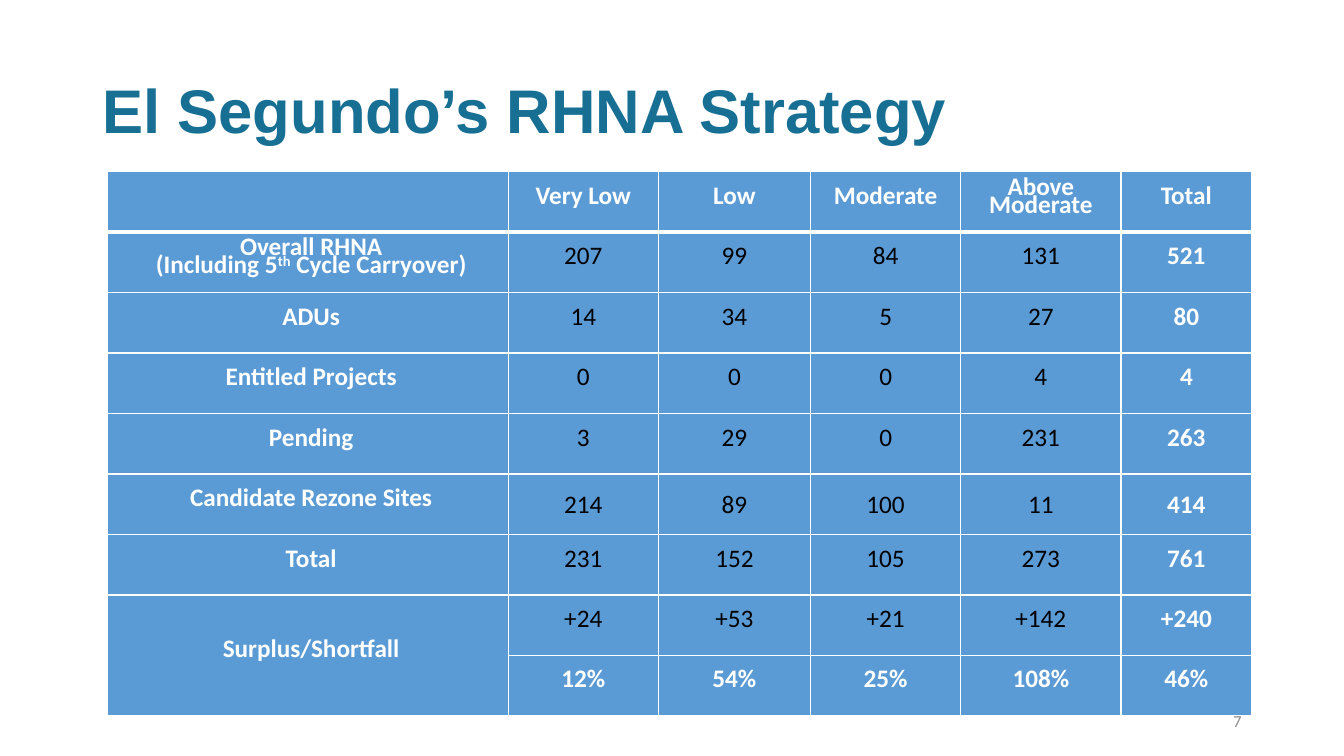
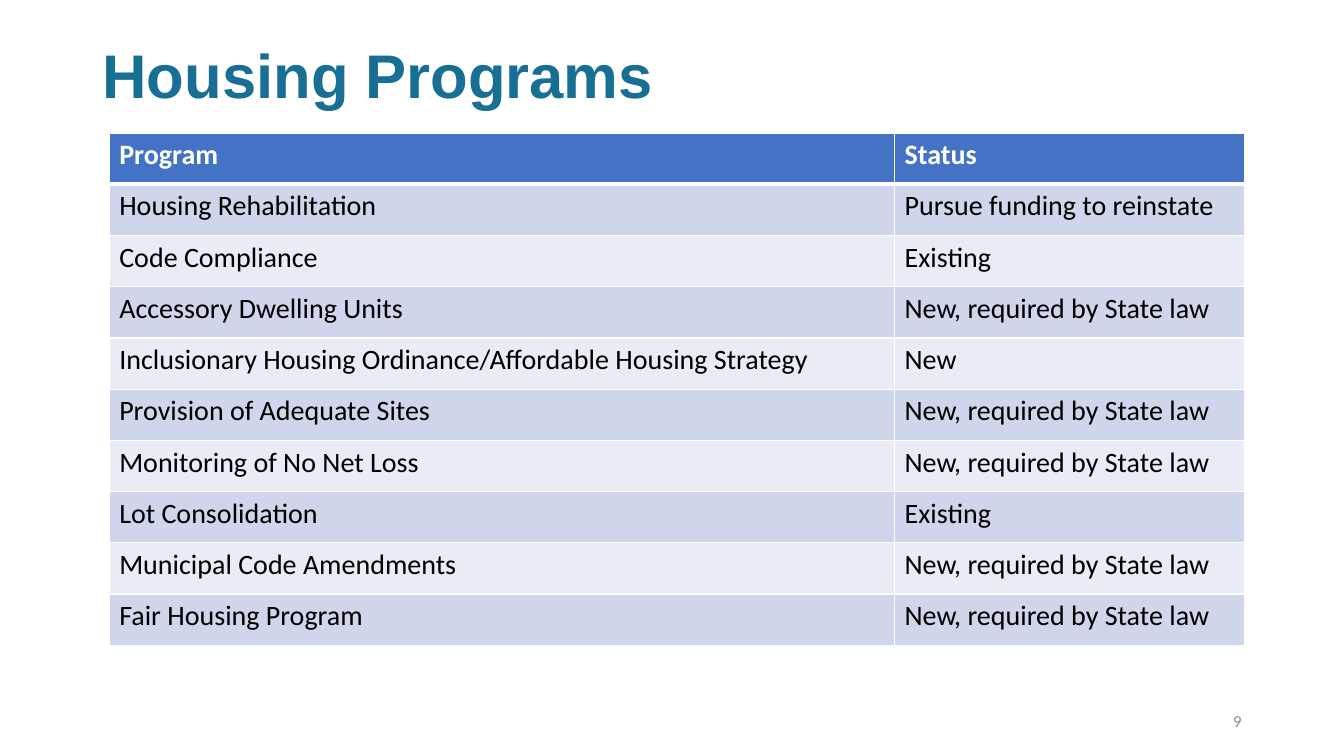
from dataclasses import dataclass

from pptx import Presentation
from pptx import util as u
from pptx.dml.color import RGBColor
from pptx.enum import text as t
from pptx.oxml import parse_xml
from pptx.oxml.ns import nsdecls

Pt = u.Pt


@dataclass(frozen=True)
class Theme:
    title_font: str = "Arial"
    body_font: str = "Calibri"
    title: str = "186F94"
    number: str = "8C8C8C"
    light: str = "FFFFFF"
    dark: str = "000000"
    strategy_fill: str = "5B9BD5"
    header_fill: str = "4472C4"
    bands: tuple = ("CFD5EA", "E9EBF5")
    title_size: int = 44
    program_size: int = 20
    strategy_size: int = 18
    number_size: int = 12
    strategy_leading: int = 13


THEME = Theme()

STRATEGY_ROWS = [
    ("", "Very Low", "Low", "Moderate", "Above Moderate", "Total"),
    ("Overall RHNA\n(Including 5^th^ Cycle Carryover)", "207", "99", "84", "131", "521"),
    ("ADUs", "14", "34", "5", "27", "80"),
    ("Entitled Projects", "0", "0", "0", "4", "4"),
    ("Pending", "3", "29", "0", "231", "263"),
    ("Candidate Rezone Sites", "214", "89", "100", "11", "414"),
    ("Total", "231", "152", "105", "273", "761"),
    ("Surplus/Shortfall", "+24", "+53", "+21", "+142", "+240"),
    ("", "12%", "54%", "25%", "108%", "46%"),
]
REZONE_ROW, TOTAL_ROW, SURPLUS_ROW, PERCENT_ROW = 5, 6, 7, 8

REQUIRED = "New, required by State law"
PROGRAM_ROWS = [
    ("Program", "Status"),
    ("Housing Rehabilitation", "Pursue funding to reinstate"),
    ("Code Compliance", "Existing"),
    ("Accessory Dwelling Units", REQUIRED),
    ("Inclusionary Housing Ordinance/Affordable Housing Strategy", "New"),
    ("Provision of Adequate Sites", REQUIRED),
    ("Monitoring of No Net Loss", REQUIRED),
    ("Lot Consolidation", "Existing"),
    ("Municipal Code Amendments", REQUIRED),
    ("Fair Housing Program", REQUIRED),
]


def add_run(paragraph, words, font, size, color, bold=False):
    run = paragraph.add_run()
    run.text = words
    run.font.name = font
    run.font.size = Pt(size)
    run.font.bold = bold
    run.font.color.rgb = RGBColor.from_string(color)
    return run


def add_slide(presentation, title, number, anchor):
    slide = presentation.slides.add_slide(presentation.slide_layouts[5])
    shape = slide.shapes.title
    shape.left, shape.top, shape.width, shape.height = Pt(66), Pt(28.75), Pt(828), Pt(104.4)
    frame = shape.text_frame
    frame.auto_size = t.MSO_AUTO_SIZE.NONE
    frame.vertical_anchor = anchor
    paragraph = frame.paragraphs[0]
    paragraph.alignment = t.PP_ALIGN.LEFT
    paragraph.line_spacing = 0.9
    add_run(paragraph, title, THEME.title_font, THEME.title_size, THEME.title, True)
    add_slide_number(slide, number)
    return slide


def add_slide_number(slide, number):
    frame = slide.shapes.add_textbox(Pt(678), Pt(500.5), Pt(216), Pt(28.75)).text_frame
    frame.word_wrap = True
    frame.vertical_anchor = t.MSO_ANCHOR.MIDDLE
    paragraph = frame.paragraphs[0]
    paragraph.alignment = t.PP_ALIGN.RIGHT
    add_run(paragraph, number, THEME.body_font, THEME.number_size, THEME.number)


def add_table(slide, rows, left, top, widths, row_height):
    frame = slide.shapes.add_table(
        len(rows), len(widths), Pt(left), Pt(top), Pt(sum(widths)), Pt(row_height * len(rows)))
    table = frame.table
    table.first_row = table.horz_banding = False
    for column, width in zip(table.columns, widths):
        column.width = Pt(width)
    for row in table.rows:
        row.height = Pt(row_height)
    return table


def style_cell(cell, fill, above=1, below=1):
    cell.fill.solid()
    cell.fill.fore_color.rgb = RGBColor.from_string(fill)
    properties = cell._tc.get_or_add_tcPr()
    sides = (("lnL", 1), ("lnR", 1), ("lnT", above), ("lnB", below))
    for position, (side, width) in enumerate(sides):
        properties.insert(position, parse_xml(
            f'<a:{side} {nsdecls("a")} w="{Pt(width)}"><a:solidFill>'
            f'<a:srgbClr val="{THEME.light}"/></a:solidFill></a:{side}>'))


def write_cell(cell, words, size, color, bold, alignment=None, leading=None):
    frame = cell.text_frame
    for index, line in enumerate(words.split("\n")):
        paragraph = frame.add_paragraph() if index else frame.paragraphs[0]
        paragraph.alignment = alignment
        paragraph.line_spacing = leading
        for part, piece in enumerate(line.split("^")):
            if piece:
                run = add_run(paragraph, piece, THEME.body_font, size, color, bold)
                if part % 2:
                    run._r.get_or_add_rPr().set("baseline", "30000")


def add_strategy_table(slide):
    widths = (286.5, 107.25, 108.75, 107.25, 114.5, 93.5)
    table = add_table(slide, STRATEGY_ROWS, 76.5, 122.5, widths, 43.2)
    table.cell(SURPLUS_ROW, 0).merge(table.cell(PERCENT_ROW, 0))
    rules = {0: 3, TOTAL_ROW: 2.25, SURPLUS_ROW: 0.75}
    for r, row in enumerate(STRATEGY_ROWS):
        for c, words in enumerate(row):
            cell = table.cell(r, c)
            if cell.is_spanned:
                continue
            cell.margin_left = Pt(5 if r and not c else 0)
            cell.margin_right = cell.margin_top = cell.margin_bottom = Pt(0)
            cell.vertical_anchor = t.MSO_ANCHOR.MIDDLE
            style_cell(cell, THEME.strategy_fill, rules.get(r - 1, 1), rules.get(r, 1))
            strong = r in (0, PERCENT_ROW) or c in (0, len(row) - 1)
            leading = 1.07 if r == REZONE_ROW and c else Pt(THEME.strategy_leading)
            write_cell(cell, words, THEME.strategy_size, THEME.light if strong else THEME.dark,
                       strong, t.PP_ALIGN.CENTER, leading)


def add_program_table(slide):
    table = add_table(slide, PROGRAM_ROWS, 78, 95, (561, 250), 36.6)
    for r, row in enumerate(PROGRAM_ROWS):
        header = r == 0
        fill = THEME.header_fill if header else THEME.bands[(r - 1) % 2]
        for c, words in enumerate(row):
            cell = table.cell(r, c)
            style_cell(cell, fill, 3 if r == 1 else 1, 3 if header else 1)
            write_cell(cell, words, THEME.program_size,
                       THEME.light if header else THEME.dark, header)


def main():
    presentation = Presentation()
    presentation.slide_width, presentation.slide_height = Pt(960), Pt(540)
    add_strategy_table(add_slide(
        presentation, "El Segundo’s RHNA Strategy", "7", t.MSO_ANCHOR.MIDDLE))
    add_program_table(add_slide(
        presentation, "Housing Programs", "9", t.MSO_ANCHOR.TOP))
    presentation.save("out.pptx")


if __name__ == "__main__":
    main()
